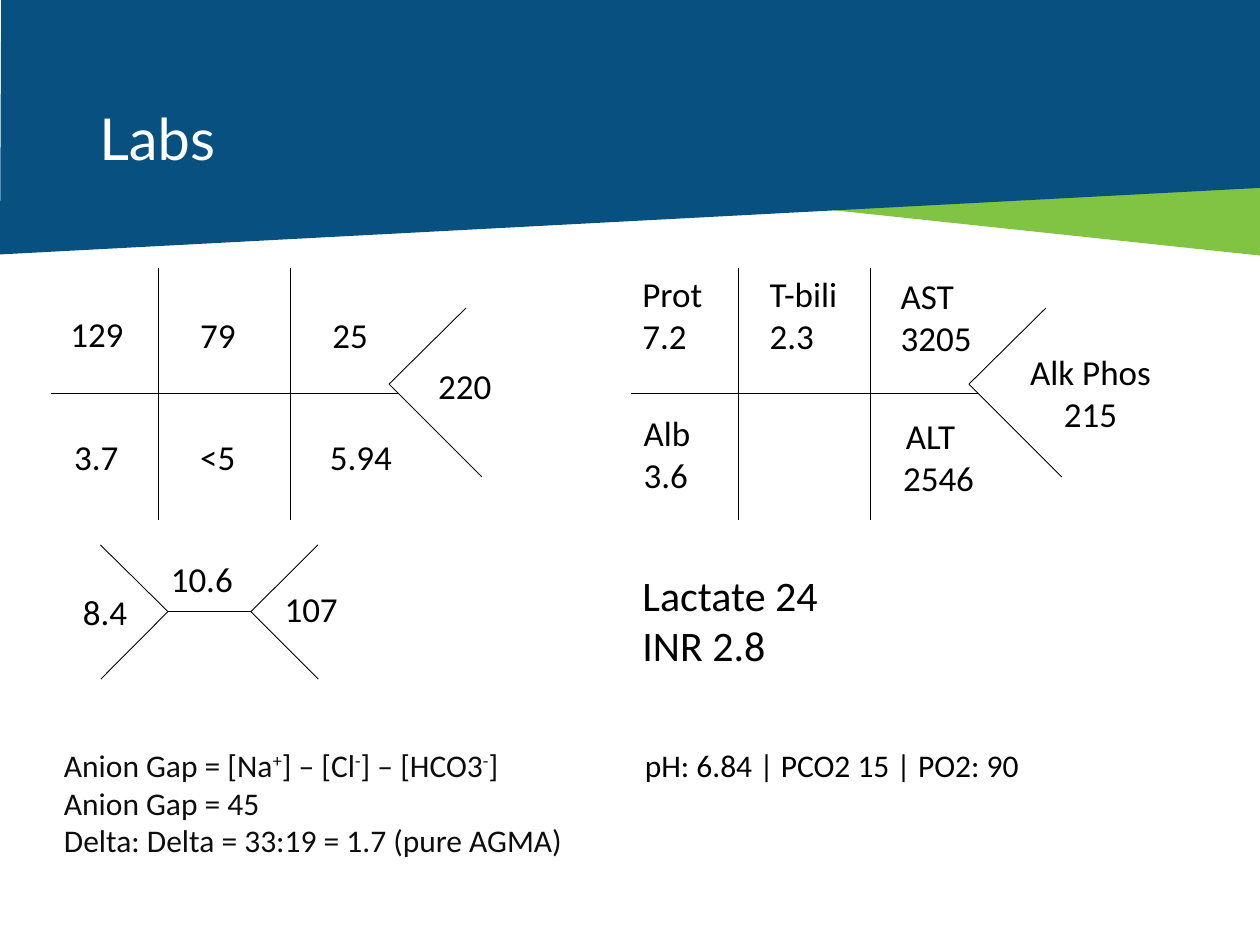
from lxml.etree import SubElement
from pptx import Presentation
from pptx.dml.color import RGBColor
from pptx.enum.shapes import MSO_CONNECTOR, MSO_SHAPE
from pptx.enum.text import MSO_ANCHOR, PP_ALIGN
from pptx.oxml.ns import qn
from pptx.util import Pt

THEME = {
    "blue": "075080", "green": "81C342", "white": "FFFFFF",
    "black": "000000", "soft": "0D0D0D",
    "body": "Calibri", "head": "Lato",
    "title": 33, "large": 24, "lab": 20, "note": 18, "rule": 0.5,
}

BANNER = [(0, 145.4), (721.4, 107.3), (720.7, 0), (0.7, 0)]
WEDGE = (341.3, 105.8, 379.4, 40.3)

# Lab grid: x1, y1, x2, y2; drawn once at each grid offset
GRID = [
    (29.3, 224.6, 227.7, 224.6),
    (266.3, 176, 222.3, 219.5),
    (222.3, 219.5, 275.4, 272.6),
    (90.5, 153.4, 90.5, 297.4),
    (166, 153.4, 166, 297.4),
]
OFFSETS = (0, 331.4)

BONE = [
    (181.7, 311.4, 143.4, 349.5),
    (143.4, 349.5, 181.9, 388),
    (57.7, 388, 96, 349.5),
    (96, 349.5, 57.4, 311.4),
    (96, 349.5, 143.4, 349.5),
]

# Lab values: left, top, width, height, lines, centred
LABS = [
    (33.1, 175, 54.7, 31.7, ["129"], False),
    (107.3, 175.7, 61.2, 31.7, ["79"], False),
    (182.9, 175.7, 48.2, 31.7, ["25"], False),
    (35.3, 245.5, 54.7, 31.7, ["3.7"], False),
    (107.3, 245.5, 44.6, 31.7, ["<5"], False),
    (170.6, 245.5, 71.3, 31.7, ["5.94"], True),
    (231.1, 204.5, 69.1, 31.7, ["220"], True),
    (360, 151.9, 54.7, 55.4, ["Prot", "7.2"], False),
    (432.7, 151.9, 61.2, 55.4, ["T-bili", "2.3"], False),
    (507.6, 153.4, 68.4, 55.4, ["AST", "3205"], False),
    (360.7, 231.8, 54.7, 55.4, ["Alb", "3.6"], False),
    (496.1, 233.3, 71.3, 55.4, ["ALT", "2546"], True),
    (564.5, 196.6, 117.4, 55.4, ["Alk Phos\v215"], True),
    (40.3, 334.1, 45.4, 31.7, ["8.4"], False),
    (90.5, 315, 60, 31.7, ["10.6"], False),
    (155.5, 331.9, 56.2, 31.7, ["107"], False),
]
INDENTS = {"2546": 9.2, "pH: 6.84 | PCO2 15 | PO2: 90": 36}

# Text between carets is raised
GAP = [
    "Anion Gap = [Na^+^] – [Cl^-^] – [HCO3^-^]",
    "Anion Gap = 45",
    "Delta: Delta = 33:19 = 1.7 (pure AGMA)",
]
LARGE = ["Lactate 24", "INR 2.8"]
GAS = ["pH: 6.84 | PCO2 15 | PO2: 90"]


def color(name):
    return RGBColor.from_string(THEME[name])


def paint(shape, name):
    shape.shadow.inherit = False
    shape.fill.solid()
    shape.fill.fore_color.rgb = color(name)
    shape.line.fill.background()


def rule(slide, x1, y1, x2, y2):
    line = slide.shapes.add_connector(
        MSO_CONNECTOR.STRAIGHT, Pt(x1), Pt(y1), Pt(x2), Pt(y2))
    line.line.color.rgb = color("black")
    line.line.width = Pt(THEME["rule"])
    SubElement(line._element.spPr, qn("a:effectLst"))


def write(slide, box, lines, size="lab", ink="black", face="body", mid=False):
    frame = slide.shapes.add_textbox(*map(Pt, box)).text_frame
    frame.word_wrap = True
    for i, line in enumerate(lines):
        para = frame.add_paragraph() if i else frame.paragraphs[0]
        if line in INDENTS:
            para._p.get_or_add_pPr().set("marL", str(Pt(INDENTS[line])))
        if mid:
            para.alignment = PP_ALIGN.CENTER
        if "^" in line:
            for j, part in enumerate(line.split("^")):
                run = para.add_run()
                run.text = part
                if j % 2:
                    run._r.get_or_add_rPr().set("baseline", "30000")
        else:
            para.text = line
        para.font.size = Pt(THEME[size])
        para.font.name = THEME[face]
        para.font.color.rgb = color(ink)
    return frame


def main():
    deck = Presentation()
    deck.slide_width, deck.slide_height = Pt(720), Pt(540)
    slide = deck.slides.add_slide(deck.slide_layouts[6])

    wedge = slide.shapes.add_shape(MSO_SHAPE.RIGHT_TRIANGLE, *map(Pt, WEDGE))
    wedge.rotation = 180
    paint(wedge, "green")
    points = [(Pt(x), Pt(y)) for x, y in BANNER]
    pen = slide.shapes.build_freeform(*points[0])
    pen.add_line_segments(points[1:], close=True)
    paint(pen.convert_to_shape(), "blue")

    title = write(slide, (49.7, 28.8, 620.6, 104.4), ["Labs"],
                  "title", "white", "head")
    title.vertical_anchor = MSO_ANCHOR.MIDDLE
    title.paragraphs[0].line_spacing = 0.9

    for dx in OFFSETS:
        for x1, y1, x2, y2 in GRID:
            rule(slide, x1 + dx, y1, x2 + dx, y2)
    for ends in BONE:
        rule(slide, *ends)

    for *box, lines, mid in LABS:
        write(slide, box, lines, mid=mid)
    write(slide, (29.5, 422.6, 343.4, 72.7), GAP, "note", "soft")
    write(slide, (360, 321.8, 138.2, 65.5), LARGE, "large")
    write(slide, (325.4, 422.6, 269.3, 28.8), GAS, "note")
    deck.save("out.pptx")


if __name__ == "__main__":
    main()
